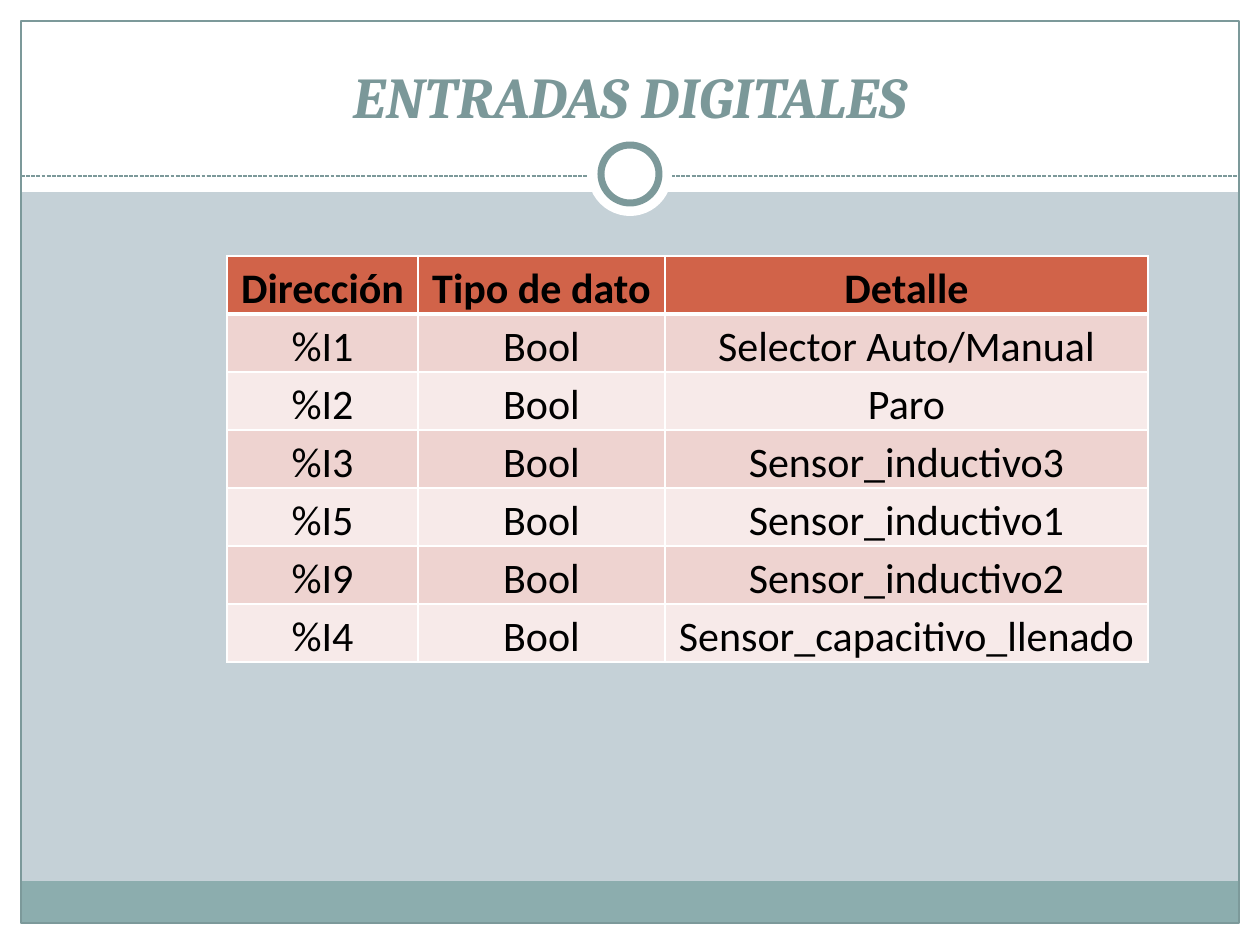
import lxml.etree
import pptx
import pptx.dml.color
import pptx.enum.dml
import pptx.enum.shapes
import pptx.enum.text
import pptx.oxml.ns
import pptx.util

PX = 914400 / 126
WIDTH, HEIGHT, MARGIN = 1260, 945, 21
COLORS = {
    "background": "C5D1D7", "white": "FFFFFF", "footer": "8CADAE",
    "outline": "7C999A", "title": "7B9899", "header": "D16349",
    "odd_row": "EED3D0", "even_row": "F7EAE9", "text": "000000",
}
SHAPES = pptx.enum.shapes.MSO_SHAPE
ROWS = [
    ("Dirección", "Tipo de dato", "Detalle"),
    ("%I1", "Bool", "Selector Auto/Manual"),
    ("%I2", "Bool", "Paro"),
    ("%I3", "Bool", "Sensor_inductivo3"),
    ("%I5", "Bool", "Sensor_inductivo1"),
    ("%I9", "Bool", "Sensor_inductivo2"),
    ("%I4", "Bool", "Sensor_capacitivo_llenado"),
]


def px(length):
    return pptx.util.Emu(round(length * PX))


def color(name):
    return pptx.dml.color.RGBColor.from_string(COLORS[name])


def paint(fill, name):
    fill.solid()
    fill.fore_color.rgb = color(name)


def write_text(text_frame, text, *, font, size, ink, bold=False, italic=False, spacing=None):
    paragraph = text_frame.paragraphs[0]
    paragraph.alignment = pptx.enum.text.PP_ALIGN.CENTER
    if spacing:
        paragraph.line_spacing = spacing
    run = paragraph.add_run()
    run.text = text
    run.font.name = font
    run.font.size = pptx.util.Pt(size)
    run.font.bold = bold
    run.font.italic = italic
    run.font.color.rgb = color(ink)


def add_shape(slide, kind, box, fill=None, line=None, line_width=0.75):
    shape = slide.shapes.add_shape(kind, *map(px, box))
    shape.shadow.inherit = False
    if fill:
        paint(shape.fill, fill)
    else:
        shape.fill.background()
    if line:
        shape.line.color.rgb = color(line)
        shape.line.width = pptx.util.Pt(line_width)
    else:
        shape.line.fill.background()


def add_frame(slide, left, top, width, height):
    """White margins and title band, footer bar, outline and dashed rule."""
    right, bottom = left + width, top + height
    inner = width - 2 * MARGIN
    for box in (
        (left, bottom - MARGIN, width, MARGIN),
        (left, top, width, 192),
        (left, top, MARGIN, height),
        (right - MARGIN, top, MARGIN, height),
    ):
        add_shape(slide, SHAPES.RECTANGLE, box, fill="white")
    add_shape(slide, SHAPES.RECTANGLE, (left + MARGIN, bottom - 64, inner, 43), fill="footer")
    add_shape(slide, SHAPES.RECTANGLE, (left + MARGIN, top + MARGIN, inner, height - 2 * MARGIN - 1),
              line="outline")

    rule = slide.shapes.add_connector(
        pptx.enum.shapes.MSO_CONNECTOR.STRAIGHT,
        px(left + MARGIN), px(top + 176), px(right - MARGIN), px(top + 176))
    rule.line.color.rgb = color("outline")
    rule.line.width = pptx.util.Pt(0.75)
    rule.line.dash_style = pptx.enum.dml.MSO_LINE.SQUARE_DOT
    lxml.etree.SubElement(rule._element.spPr, pptx.oxml.ns.qn("a:effectLst"))


def add_ring(slide, left, top, size):
    """White disc with a ring centred in it."""
    inset = 13
    ring_size = size - 2 * inset
    add_shape(slide, SHAPES.OVAL, (left, top, size, size), fill="white")
    add_shape(slide, SHAPES.OVAL, (left + inset, top + inset, ring_size, ring_size),
              fill="white", line="outline", line_width=4)


def add_title(slide, left, top, width, height):
    text_frame = slide.shapes.add_textbox(*map(px, (left, top, width, height))).text_frame
    text_frame.word_wrap = True
    text_frame.vertical_anchor = pptx.enum.text.MSO_ANCHOR.BOTTOM
    write_text(text_frame, "ENTRADAS DIGITALES", font="Cambria", size=33, ink="title",
               bold=True, italic=True)


def set_borders(cell, top, bottom):
    properties = cell._tc.get_or_add_tcPr()
    for side, points in (("L", 1), ("R", 1), ("T", top), ("B", bottom)):
        border = lxml.etree.SubElement(properties, pptx.oxml.ns.qn(f"a:ln{side}"),
                                       w=str(pptx.util.Pt(points)))
        fill = lxml.etree.SubElement(border, pptx.oxml.ns.qn("a:solidFill"))
        lxml.etree.SubElement(fill, pptx.oxml.ns.qn("a:srgbClr"), val=COLORS["white"])


def add_inputs_table(slide, left, top, width, height):
    column_widths = (191, 247, width - 191 - 247)
    table = slide.shapes.add_table(len(ROWS), len(column_widths),
                                   *map(px, (left, top, width, height))).table
    table.horz_banding = False
    for column, column_width in zip(table.columns, column_widths):
        column.width = px(column_width)
    for row_index, row in enumerate(ROWS):
        is_header = row_index == 0
        fill = "header" if is_header else "odd_row" if row_index % 2 else "even_row"
        for column_index, text in enumerate(row):
            cell = table.cell(row_index, column_index)
            cell.margin_left = cell.margin_right = px(9)
            cell.margin_top = cell.margin_bottom = 0
            cell.vertical_anchor = pptx.enum.text.MSO_ANCHOR.BOTTOM
            set_borders(cell, top=3 if row_index == 1 else 1, bottom=3 if is_header else 1)
            paint(cell.fill, fill)
            write_text(cell.text_frame, text, font="Calibri", size=24, ink="text",
                       bold=is_header, spacing=1.15)


def main():
    presentation = pptx.Presentation()
    presentation.slide_width, presentation.slide_height = px(WIDTH), px(HEIGHT)
    slide = presentation.slides.add_slide(presentation.slide_layouts[6])
    paint(slide.background.fill, "background")
    add_frame(slide, 0, 0, WIDTH, HEIGHT)
    add_ring(slide, 588, 132, 84)
    add_title(slide, 42, 32, 1176, 104)
    add_inputs_table(slide, 227, 256, 921, 406)
    presentation.save("out.pptx")


if __name__ == "__main__":
    main()
